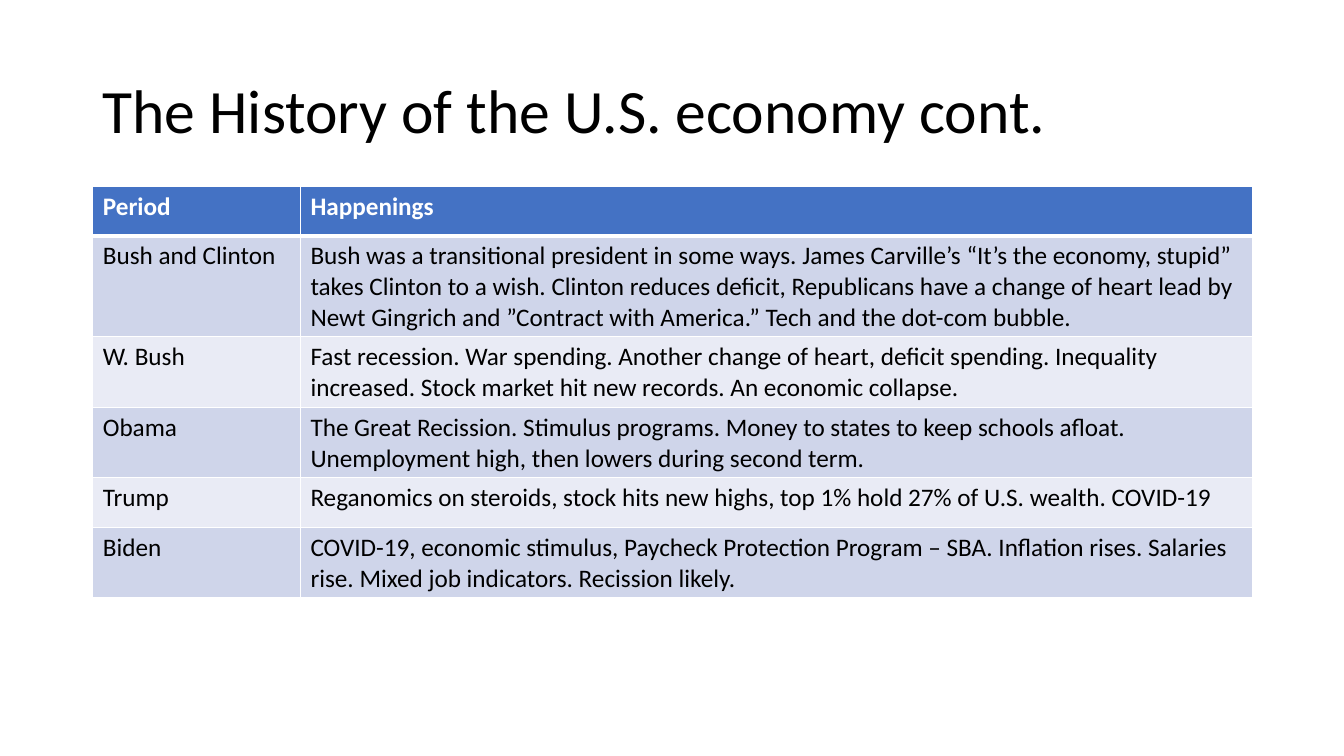
from dataclasses import dataclass

from lxml.etree import SubElement
from pptx import Presentation
from pptx.dml.color import RGBColor
from pptx.enum.text import MSO_ANCHOR
from pptx.oxml.ns import qn
from pptx.slide import Slide
from pptx.table import _Cell
from pptx.text.text import _Paragraph
from pptx.util import Inches, Pt

FONT = "Calibri"
BLACK = RGBColor(0x00, 0x00, 0x00)
WHITE = RGBColor(0xFF, 0xFF, 0xFF)
HEADER_BLUE = RGBColor(0x44, 0x72, 0xC4)
BANDS = (RGBColor(0xE9, 0xEB, 0xF5), RGBColor(0xCF, 0xD5, 0xEA))

LEFT, WIDTH = 0.92, 11.5
COLUMN_WIDTHS = (2.06, 9.44)
ROW_HEIGHT = 0.49


@dataclass(frozen=True)
class Era:
    period: str
    happenings: str


ERAS = (
    Era("Period", "Happenings"),
    Era("Bush and Clinton",
        "Bush was a transitional president in some ways. James Carville’s “It’s the economy, "
        "stupid” takes Clinton to a wish. Clinton reduces deficit, Republicans have a change of "
        "heart lead by Newt Gingrich and ”Contract with America.” Tech and the dot-com bubble."),
    Era("W. Bush",
        "Fast recession. War spending. Another change of heart, deficit spending. Inequality "
        "increased. Stock market hit new records. An economic collapse."),
    Era("Obama",
        "The Great Recission. Stimulus programs. Money to states to keep schools afloat. "
        "Unemployment high, then lowers during second term."),
    Era("Trump",
        "Reganomics on steroids, stock hits new highs, top 1% hold 27% of U.S. wealth. COVID-19"),
    Era("Biden",
        "COVID-19, economic stimulus, Paycheck Protection Program – SBA. Inflation rises. "
        "Salaries rise. Mixed job indicators. Recission likely."),
)


def write(p: _Paragraph, text: str, size: int, color: RGBColor, bold: bool = False) -> None:
    p.text = text
    for r in p.runs:
        r.font.name = FONT
        r.font.size = Pt(size)
        r.font.bold = bold
        r.font.color.rgb = color


def set_borders(cell: _Cell, top: int, bottom: int) -> None:
    tcPr = cell._tc.get_or_add_tcPr()
    for side, width in (("L", 1), ("R", 1), ("T", top), ("B", bottom)):
        ln = SubElement(tcPr, qn(f"a:ln{side}"), w=str(Pt(width)))
        SubElement(SubElement(ln, qn("a:solidFill")), qn("a:srgbClr"), val=str(WHITE))


def add_title(s: Slide, text: str) -> None:
    sp = s.shapes.add_textbox(Inches(LEFT), Inches(0.4), Inches(WIDTH), Inches(1.45))
    tf = sp.text_frame
    tf.word_wrap = True
    tf.vertical_anchor = MSO_ANCHOR.MIDDLE
    p = tf.paragraphs[0]
    write(p, text, 44, BLACK)
    p.line_spacing = 0.9


def add_era_table(s: Slide, eras: tuple[Era, ...]) -> None:
    table = s.shapes.add_table(len(eras), len(COLUMN_WIDTHS), Inches(LEFT), Inches(1.85),
                               Inches(WIDTH), Inches(ROW_HEIGHT * len(eras))).table
    for column, width in zip(table.columns, COLUMN_WIDTHS):
        column.width = Inches(width)
    for i, era in enumerate(eras):
        header = i == 0
        table.rows[i].height = Inches(ROW_HEIGHT)
        for cell, text in zip(table.rows[i].cells, (era.period, era.happenings)):
            set_borders(cell, top=3 if i == 1 else 1, bottom=3 if header else 1)
            cell.fill.solid()
            cell.fill.fore_color.rgb = HEADER_BLUE if header else BANDS[i % 2]
            write(cell.text_frame.paragraphs[0], text, 18, WHITE if header else BLACK, header)


def main() -> None:
    """Build the slide on the history of the U.S. economy."""
    prs = Presentation()
    prs.slide_width, prs.slide_height = Inches(13.33), Inches(7.5)
    s = prs.slides.add_slide(prs.slide_layouts[6])
    add_title(s, "The History of the U.S. economy cont.")
    add_era_table(s, ERAS)
    prs.save("out.pptx")


if __name__ == "__main__":
    main()
